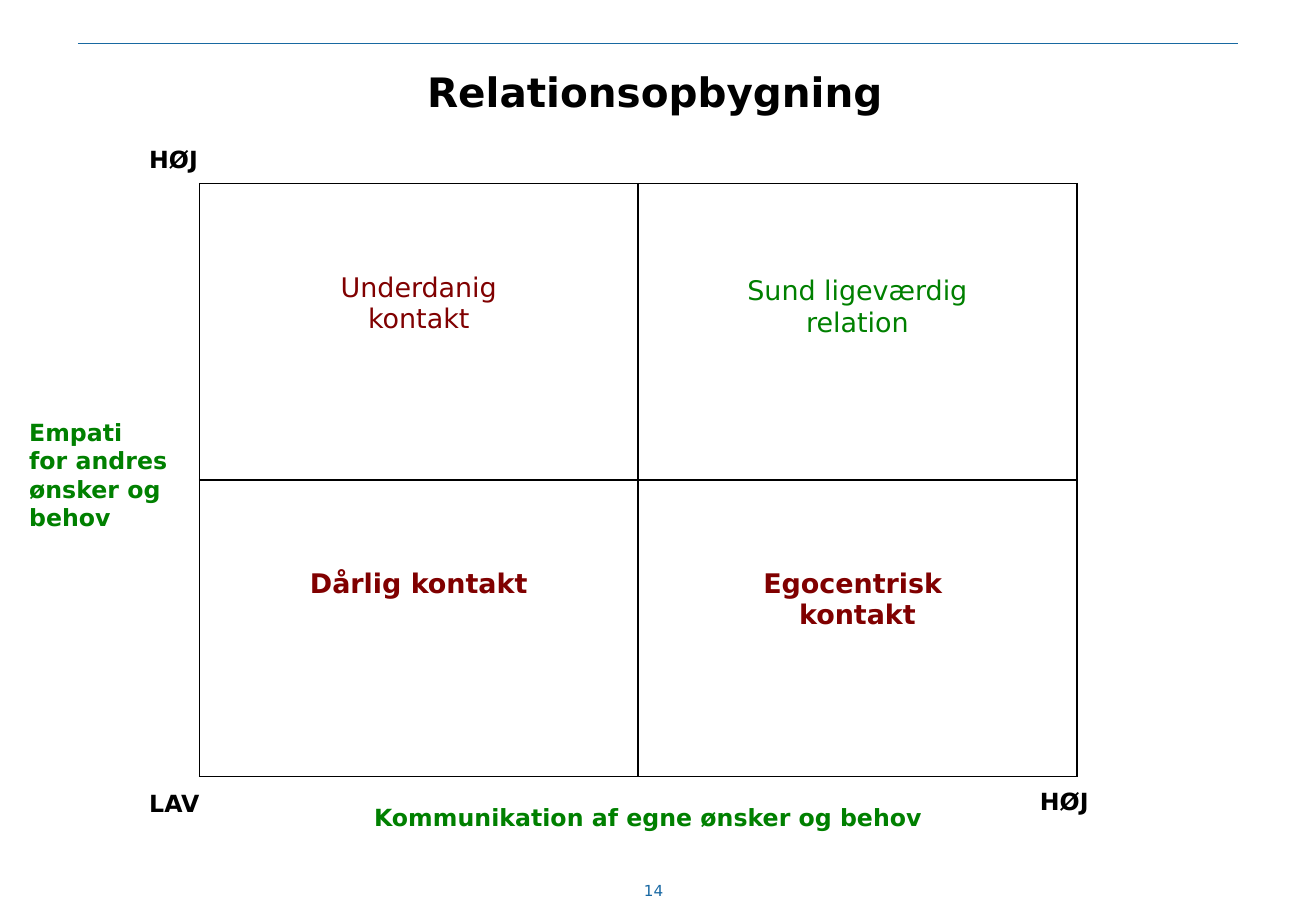
from pptx import Presentation
from pptx.dml.color import RGBColor
from pptx.enum.shapes import MSO_CONNECTOR
from pptx.enum.text import MSO_ANCHOR, PP_ALIGN
from pptx.oxml.ns import qn
from pptx.util import Cm, Pt
from lxml import etree

STRAIGHT = MSO_CONNECTOR.STRAIGHT
LEFT, CENTER = PP_ALIGN.LEFT, PP_ALIGN.CENTER
TOP, MIDDLE, BOTTOM = MSO_ANCHOR.TOP, MSO_ANCHOR.MIDDLE, MSO_ANCHOR.BOTTOM
FONT = "DejaVu Sans"
COLORS = {"black": "000000", "green": "008000", "red": "800000",
          "rule": "1869A1", "number": "1868A3"}

# text, colour, bold, top margin in cm
QUADRANTS = [
    [("Underdanig\nkontakt", "red", False, 1.85),
     ("Sund ligeværdig\nrelation", "green", False, 1.93)],
    [("Dårlig kontakt", "red", True, 1.85),
     ("Egocentrisk \nkontakt", "red", True, 1.85)],
]

# text, colour, left, top, width, height in cm
AXIS_LABELS = [
    ("HØJ", "black", 2.87, 2.9, 1.63, 0.86),
    ("HØJ", "black", 21.49, 16.33, 1.63, 0.86),
    ("LAV", "black", 2.87, 16.38, 1.63, 0.86),
    ("Empati\nfor andres\nønsker og\nbehov", "green", 0.36, 8.61, 3.45, 2.64),
    ("Kommunikation af egne ønsker og behov", "green", 7.57, 16.66, 12.01, 0.86),
]


def write_text(tf, text, size=14, color="black", bold=False, align=LEFT):
    for i, line in enumerate(text.split("\n")):
        p = tf.paragraphs[0] if i == 0 else tf.add_paragraph()
        p.alignment = align
        r = p.add_run()
        r.text = line
        r.font.name = FONT
        r.font.size = Pt(size)
        r.font.bold = bold
        r.font.color.rgb = RGBColor.from_string(COLORS[color])


def add_text(s, text, left, top, width, height, anchor=TOP, wrap=True,
             inset=None, **style):
    tf = s.shapes.add_textbox(Cm(left), Cm(top), Cm(width), Cm(height)).text_frame
    tf.word_wrap = wrap
    tf.vertical_anchor = anchor
    if inset is not None:
        tf.margin_left = tf.margin_right = Cm(inset)
        tf.margin_top = tf.margin_bottom = Cm(inset)
    write_text(tf, text, **style)


def add_rule(s, left, right, y):
    line = s.shapes.add_connector(STRAIGHT, Cm(left), Cm(y), Cm(right), Cm(y))
    line.line.color.rgb = RGBColor.from_string(COLORS["rule"])
    line.line.width = Pt(0.75)
    etree.SubElement(line._element.spPr, qn("a:effectLst"))


def set_borders(cell, color, width):
    tc_pr = cell._tc.get_or_add_tcPr()
    for side in ("lnL", "lnR", "lnT", "lnB"):
        ln = etree.SubElement(tc_pr, qn(f"a:{side}"), w=str(Pt(width)))
        fill = etree.SubElement(ln, qn("a:solidFill"))
        etree.SubElement(fill, qn("a:srgbClr"), val=COLORS[color])


def add_matrix(s, left, top, col_width, row_height):
    table = s.shapes.add_table(2, 2, Cm(left), Cm(top), Cm(2 * col_width),
                               Cm(2 * row_height)).table
    table.first_row = table.horz_banding = False
    for i in range(2):
        table.columns[i].width = Cm(col_width)
        table.rows[i].height = Cm(row_height)
    for row, quadrants in enumerate(QUADRANTS):
        for col, (text, color, bold, margin) in enumerate(quadrants):
            cell = table.cell(row, col)
            set_borders(cell, "black", 1)
            cell.fill.background()
            cell.margin_top = Cm(margin)
            write_text(cell.text_frame, text, size=16, color=color, bold=bold,
                       align=CENTER)


def main():
    prs = Presentation()
    prs.slide_width, prs.slide_height = Cm(27.51), Cm(19.05)
    s = prs.slides.add_slide(prs.slide_layouts[6])
    add_text(s, "14", 12.75, 18.36, 1.83, 0.53, anchor=BOTTOM, inset=0.08,
             size=9, color="number", align=CENTER)
    add_rule(s, 1.63, 25.88, 0.91)
    add_text(s, "Relationsopbygning", 1.55, 0.71, 24.28, 2.41, anchor=MIDDLE,
             size=24, bold=True, align=CENTER)
    add_matrix(s, 4.17, 3.84, 9.17, 6.2)
    for text, color, *box in AXIS_LABELS:
        add_text(s, text, *box, wrap=False, color=color, bold=True)
    prs.save("out.pptx")


if __name__ == "__main__":
    main()
